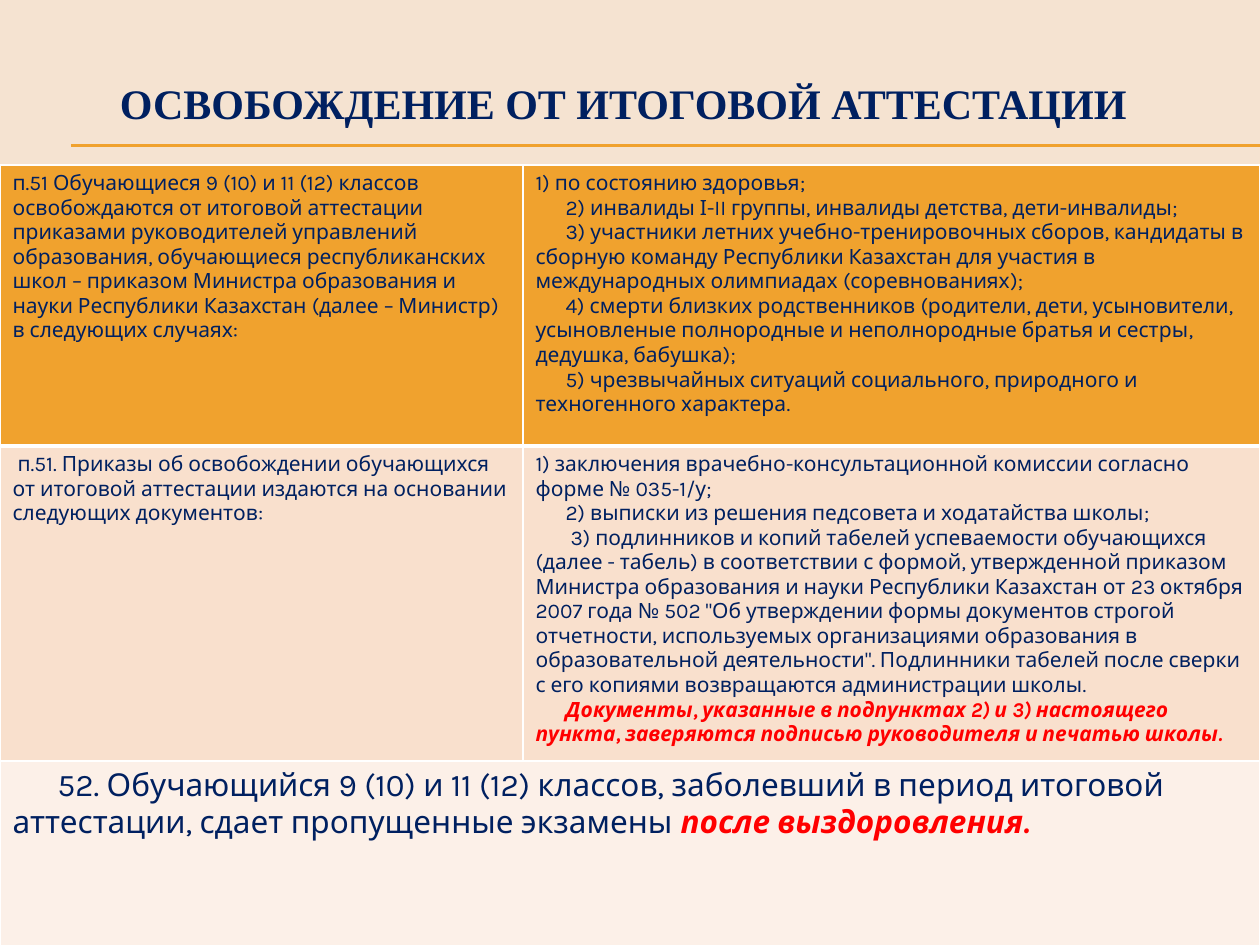
import pptx
import pptx.util
import pptx.dml.color
import pptx.enum.shapes
import pptx.enum.text
import pptx.oxml.ns
import lxml.etree

PX = 914400 // 126
COLORS = {
    "background": "F5E3D1", "navy": "002060", "red": "FF0000", "white": "FFFFFF",
    "orange": "F0A22E", "peach": "F9E0CD", "cream": "FCF0E8",
}
TITLE = {"name": "Times New Roman", "size": pptx.util.Pt(24), "bold": True}
BODY = {"name": "Karla", "size": pptx.util.Pt(12)}
LARGE = {"name": "Karla", "size": pptx.util.Pt(18)}
STRESS = {"bold": True, "italic": True}

# Each paragraph is (first-line indent in px, plain text, stressed text)
GROUNDS = [(0, "п.51 Обучающиеся 9 (10) и 11 (12) классов освобождаются от итоговой аттестации приказами руководителей управлений образования, обучающиеся республиканских школ – приказом Министра образования и науки Республики Казахстан (далее – Министр) в следующих случаях:", "")]
GROUND_LIST = [
    (0, "1) по состоянию здоровья;", ""),
    (30, "2) инвалиды І-II группы, инвалиды детства, дети-инвалиды;", ""),
    (30, "3) участники летних учебно-тренировочных сборов, кандидаты в сборную команду Республики Казахстан для участия в международных олимпиадах (соревнованиях);", ""),
    (30, "4) смерти близких родственников (родители, дети, усыновители, усыновленые полнородные и неполнородные братья и сестры, дедушка, бабушка);", ""),
    (30, "5) чрезвычайных ситуаций социального, природного и техногенного характера.", ""),
]
PAPERS = [(5, "п.51. Приказы об освобождении обучающихся от итоговой аттестации издаются на основании следующих документов:", "")]
PAPER_LIST = [
    (0, "1) заключения врачебно-консультационной комиссии согласно форме № 035-1/у;", ""),
    (30, "2) выписки из решения педсовета и ходатайства школы;", ""),
    (35, "3) подлинников и копий табелей успеваемости обучающихся (далее - табель) в соответствии с формой, утвержденной приказом Министра образования и науки Республики Казахстан от 23 октября 2007 года № 502 \"Об утверждении формы документов строгой отчетности, используемых организациями образования в образовательной деятельности\". Подлинники табелей после сверки с его копиями возвращаются администрации школы.", ""),
    (30, "", "Документы, указанные в подпунктах 2) и 3) настоящего пункта, заверяются подписью руководителя и печатью школы."),
]
ILLNESS = [(45, "52. Обучающийся 9 (10) и 11 (12) классов, заболевший в период итоговой аттестации, сдает пропущенные экзамены ", "после выздоровления.")]

# Each row is (height, fill, bottom border in points, font, cells)
ROWS = [
    (281, "orange", 3, BODY, [GROUNDS, GROUND_LIST]),
    (305, "peach", 1, BODY, [PAPERS, PAPER_LIST]),
    (195, "cream", 1, LARGE, [ILLNESS]),
]


def rgb(name):
    return pptx.dml.color.RGBColor.from_string(COLORS[name])


def add_run(p, text, font, color):
    r = p.add_run()
    r.text = text
    for key, value in font.items():
        setattr(r.font, key, value)
    r.font.color.rgb = rgb(color)


def add_title(s, x, y, w, h):
    tf = s.shapes.add_textbox(x * PX, y * PX, w * PX, h * PX).text_frame
    tf.word_wrap = True
    tf.vertical_anchor = pptx.enum.text.MSO_ANCHOR.MIDDLE
    p = tf.paragraphs[0]
    p.alignment = pptx.enum.text.PP_ALIGN.CENTER
    add_run(p, "ОСВОБОЖДЕНИЕ ОТ ИТОГОВОЙ АТТЕСТАЦИИ", TITLE, "navy")


def add_rule(s, x, y, w):
    # Two hairlines, one px apart
    for line_y in (y, y + 1):
        sp = s.shapes.add_connector(
            pptx.enum.shapes.MSO_CONNECTOR.STRAIGHT,
            x * PX, line_y * PX, (x + w) * PX, line_y * PX)
        sp.line.color.rgb = rgb("orange")
        sp.line.width = pptx.util.Pt(0.75)
        lxml.etree.SubElement(sp._element.spPr, pptx.oxml.ns.qn("a:effectLst"))


def set_borders(cell, bottom):
    tcPr = cell._tc.get_or_add_tcPr()
    for tag, width in (("lnL", 1), ("lnR", 1), ("lnT", 1), ("lnB", bottom)):
        ln = lxml.etree.SubElement(tcPr, pptx.oxml.ns.qn("a:" + tag), w=str(pptx.util.Pt(width)))
        fill = lxml.etree.SubElement(ln, pptx.oxml.ns.qn("a:solidFill"))
        lxml.etree.SubElement(fill, pptx.oxml.ns.qn("a:srgbClr"), val=COLORS["white"])


def fill_text(tf, paragraphs, font):
    for i, (indent, plain, stressed) in enumerate(paragraphs):
        p = tf.add_paragraph() if i else tf.paragraphs[0]
        p._p.get_or_add_pPr().set("indent", str(indent * PX))
        if plain:
            add_run(p, plain, font, "navy")
        if stressed:
            add_run(p, stressed, {**font, **STRESS}, "red")


def add_rules_table(s, x, y, columns):
    height = sum(row[0] for row in ROWS)
    table = s.shapes.add_table(
        len(ROWS), len(columns), x * PX, y * PX, sum(columns) * PX, height * PX).table
    for column, width in zip(table.columns, columns):
        column.width = width * PX
    for i, (row_height, color, bottom, font, texts) in enumerate(ROWS):
        table.rows[i].height = row_height * PX
        for cell in table.rows[i].cells:
            set_borders(cell, bottom)
            cell.fill.solid()
            cell.fill.fore_color.rgb = rgb(color)
        # A single text spans the whole row
        if len(texts) == 1:
            table.cell(i, 0).merge(table.cell(i, len(columns) - 1))
        for j, paragraphs in enumerate(texts):
            fill_text(table.cell(i, j).text_frame, paragraphs, font)


def main():
    prs = pptx.Presentation()
    prs.slide_width, prs.slide_height = pptx.util.Inches(10), pptx.util.Inches(7.5)
    s = prs.slides.add_slide(prs.slide_layouts[6])
    s.background.fill.solid()
    s.background.fill.fore_color.rgb = rgb("background")
    add_rule(s, 71, 145, 1189)
    add_title(s, 25, 45, 1197, 116)
    add_rules_table(s, 0, 165, [523, 737])
    prs.save("out.pptx")


if __name__ == "__main__":
    main()
